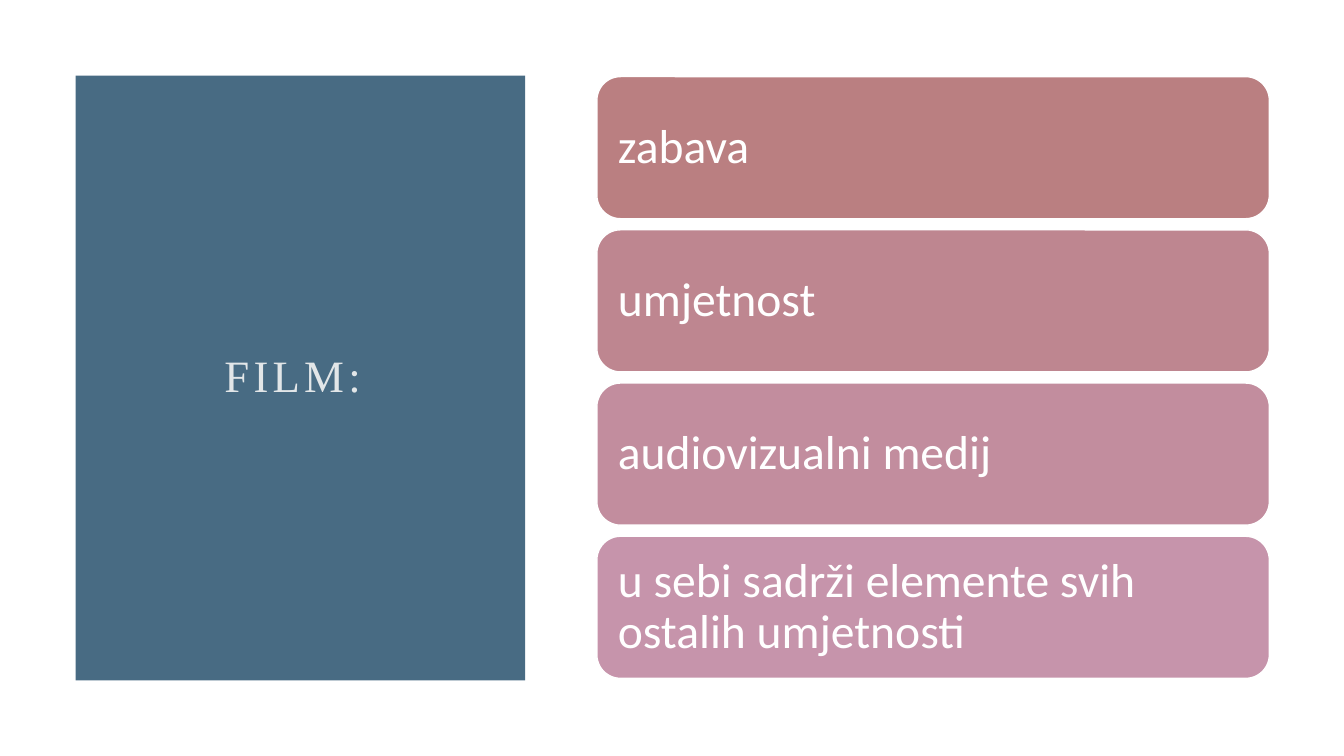
from dataclasses import dataclass

from pptx import Presentation
from pptx.dml.color import RGBColor
from pptx.enum.shapes import MSO_SHAPE
from pptx.enum.text import MSO_ANCHOR, PP_ALIGN
from pptx.shapes.autoshape import Shape
from pptx.slide import Slide
from pptx.util import Emu, Pt

EMU_PER_PX = 9144  # 100 px to the inch


@dataclass(frozen=True)
class Theme:
    panel: str = "486B83"
    heading: str = "E2E6E8"
    white: str = "FFFFFF"
    heading_font: str = "Times New Roman"
    card_font: str = "Calibri"
    heading_size: int = 32
    card_size: int = 34
    line_spacing: float = 0.9


@dataclass(frozen=True)
class Box:
    left: int
    top: int
    width: int
    height: int

    def emu(self) -> tuple[Emu, Emu, Emu, Emu]:
        return px(self.left), px(self.top), px(self.width), px(self.height)


@dataclass(frozen=True)
class Card:
    text: str
    fill: str


THEME = Theme()
PANEL = Box(75, 75, 446, 600)
HEADING = Box(150, 150, 296, 450)
FIRST_CARD = Box(592, 76, 667, 141)
CARD_PITCH = 152
CARDS = (
    Card("zabava", "BA7F81"),
    Card("umjetnost", "BE8690"),
    Card("audiovizualni medij", "C28D9E"),
    Card("u sebi sadrži elemente svih ostalih umjetnosti", "C694AB"),
)


def px(length: int) -> Emu:
    return Emu(length * EMU_PER_PX)


def write(holder: Shape, text: str, *, font: str, size: int, color: str,
          align: PP_ALIGN = PP_ALIGN.LEFT, inset: int = 10,
          tracking: int = 0) -> None:
    """Set vertically centred, wrapped text; tracking is in points."""
    frame = holder.text_frame
    frame.word_wrap = True
    frame.vertical_anchor = MSO_ANCHOR.MIDDLE
    frame.margin_left = frame.margin_right = px(inset)
    frame.margin_top = frame.margin_bottom = px(inset)
    paragraph = frame.paragraphs[0]
    paragraph.alignment = align
    paragraph.line_spacing = THEME.line_spacing
    run = paragraph.add_run()
    run.text = text
    run.font.name = font
    run.font.size = Pt(size)
    run.font.color.rgb = RGBColor.from_string(color)
    if tracking:
        run.font._element.set("spc", str(tracking * 100))


def add_block(slide: Slide, preset: MSO_SHAPE, box: Box, fill: str,
              outline: str | None = None) -> Shape:
    block = slide.shapes.add_shape(preset, *box.emu())
    block.shadow.inherit = False
    block.fill.solid()
    block.fill.fore_color.rgb = RGBColor.from_string(fill)
    if outline:
        block.line.color.rgb = RGBColor.from_string(outline)
        block.line.width = Pt(1)
    else:
        block.line.fill.background()
    return block


def add_card(slide: Slide, card: Card, row: int) -> None:
    box = Box(FIRST_CARD.left, FIRST_CARD.top + row * CARD_PITCH,
              FIRST_CARD.width, FIRST_CARD.height)
    block = add_block(slide, MSO_SHAPE.ROUNDED_RECTANGLE, box, card.fill,
                      outline=THEME.white)
    write(block, card.text, font=THEME.card_font, size=THEME.card_size,
          color=THEME.white, inset=14)


def main() -> None:
    deck = Presentation()
    deck.slide_width, deck.slide_height = px(1333), px(750)
    slide = deck.slides.add_slide(deck.slide_layouts[6])

    # Heading panel
    add_block(slide, MSO_SHAPE.RECTANGLE, PANEL, THEME.panel)
    heading = slide.shapes.add_textbox(*HEADING.emu())
    write(heading, "FILM: ", font=THEME.heading_font, size=THEME.heading_size,
          color=THEME.heading, align=PP_ALIGN.CENTER, tracking=3)

    # Column of cards
    for row, card in enumerate(CARDS):
        add_card(slide, card, row)

    deck.save("out.pptx")


if __name__ == "__main__":
    main()
